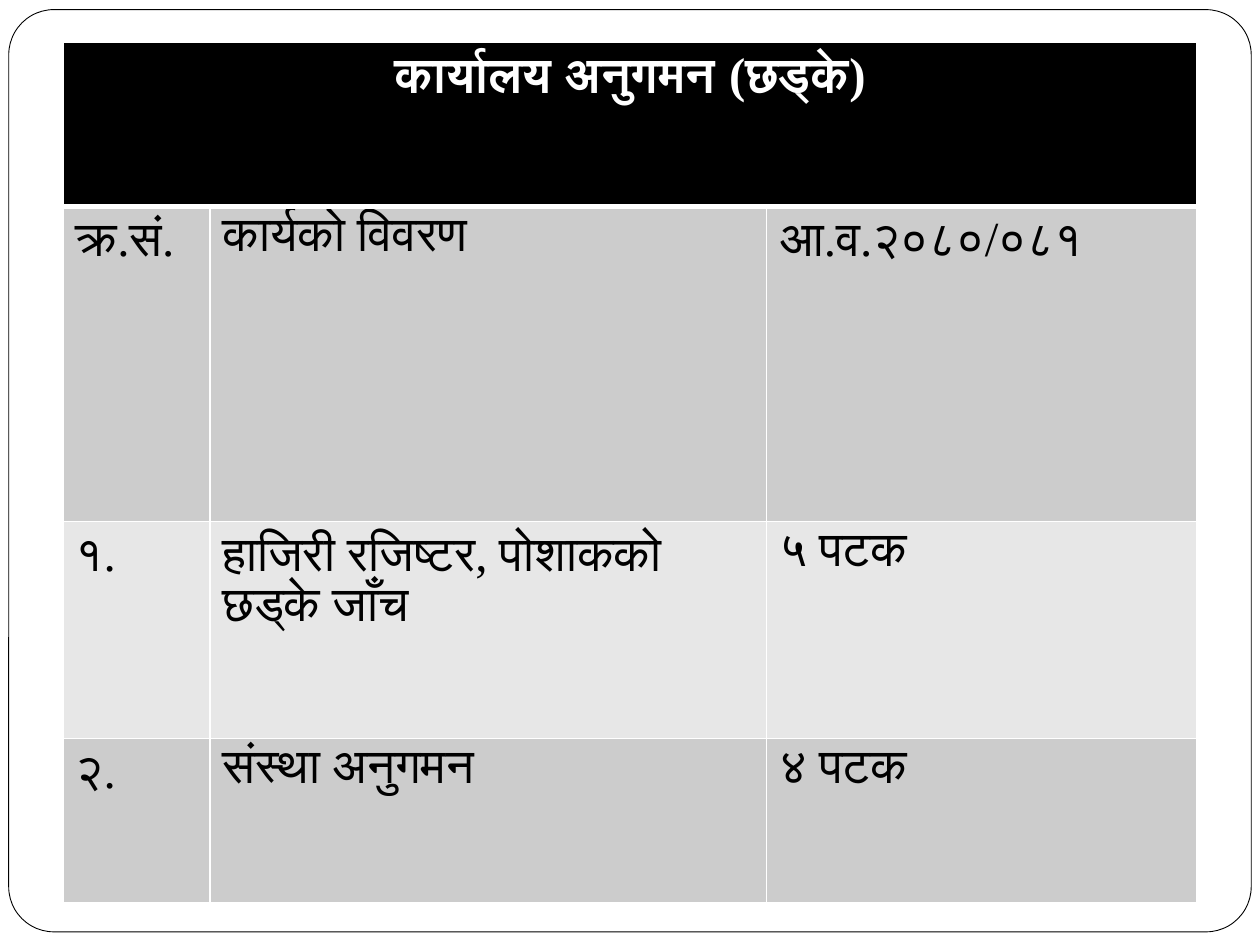
from lxml.etree import SubElement
from pptx import Presentation
from pptx.dml.color import RGBColor
from pptx.enum.shapes import MSO_SHAPE
from pptx.enum.text import PP_ALIGN
from pptx.oxml.ns import qn
from pptx.util import Pt

BLACK = RGBColor(0x00, 0x00, 0x00)
WHITE = RGBColor(0xFF, 0xFF, 0xFF)
DARK_BAND = RGBColor(0xCC, 0xCC, 0xCC)
LIGHT_BAND = RGBColor(0xE7, 0xE7, 0xE7)

COLUMN_WIDTHS = [84, 318, 246]
ROW_HEIGHTS = [94, 180, 124, 94]
ROWS = [
    ["कार्यालय अनुगमन (छड्के)", "", ""],
    ["क्र.सं.", "कार्यको विवरण", "आ.व.२०८०/०८१"],
    ["१.", "हाजिरी रजिष्टर, पोशाकको छड्के जाँच", "५ पटक"],
    ["२.", "संस्था अनुगमन", "४ पटक"],
]


def add_border(cell, side, width):
    line = SubElement(cell._tc.get_or_add_tcPr(), qn(f"a:ln{side}"), w=str(Pt(width)))
    fill = SubElement(line, qn("a:solidFill"))
    SubElement(fill, qn("a:srgbClr"), val=str(WHITE))


presentation = Presentation()
presentation.slide_width = Pt(720)
presentation.slide_height = Pt(540)
slide = presentation.slides.add_slide(presentation.slide_layouts[6])

# Rounded frame
frame = slide.shapes.add_shape(
    MSO_SHAPE.ROUNDED_RECTANGLE, Pt(5), Pt(5.5), Pt(710), Pt(527)
)
frame.adjustments[0] = 0.049
frame.shadow.inherit = False
frame.fill.solid()
frame.fill.fore_color.rgb = WHITE
frame.line.color.rgb = BLACK
frame.line.width = Pt(0.5)

# Monitoring table
table = slide.shapes.add_table(
    len(ROW_HEIGHTS), len(COLUMN_WIDTHS),
    Pt(36), Pt(24), Pt(sum(COLUMN_WIDTHS)), Pt(sum(ROW_HEIGHTS)),
).table
for column, width in zip(table.columns, COLUMN_WIDTHS):
    column.width = Pt(width)
for row, height in zip(table.rows, ROW_HEIGHTS):
    row.height = Pt(height)
table.cell(0, 0).merge(table.cell(0, 2))

# Cell borders, bands and text
for row_index, texts in enumerate(ROWS):
    is_title = row_index == 0
    band = BLACK if is_title else DARK_BAND if row_index % 2 else LIGHT_BAND
    for column_index, text in enumerate(texts):
        cell = table.cell(row_index, column_index)
        add_border(cell, "L", 1)
        add_border(cell, "R", 1)
        add_border(cell, "T", 3 if row_index == 1 else 1)
        add_border(cell, "B", 3 if is_title else 1)
        cell.fill.solid()
        cell.fill.fore_color.rgb = band
        if not text:
            continue
        paragraph = cell.text_frame.paragraphs[0]
        paragraph.alignment = PP_ALIGN.CENTER if is_title else PP_ALIGN.LEFT
        run = paragraph.add_run()
        run.text = text
        run.font.name = "Times New Roman"
        run.font.size = Pt(28)
        run.font.bold = is_title
        run.font.color.rgb = WHITE if is_title else BLACK

presentation.save("out.pptx")
